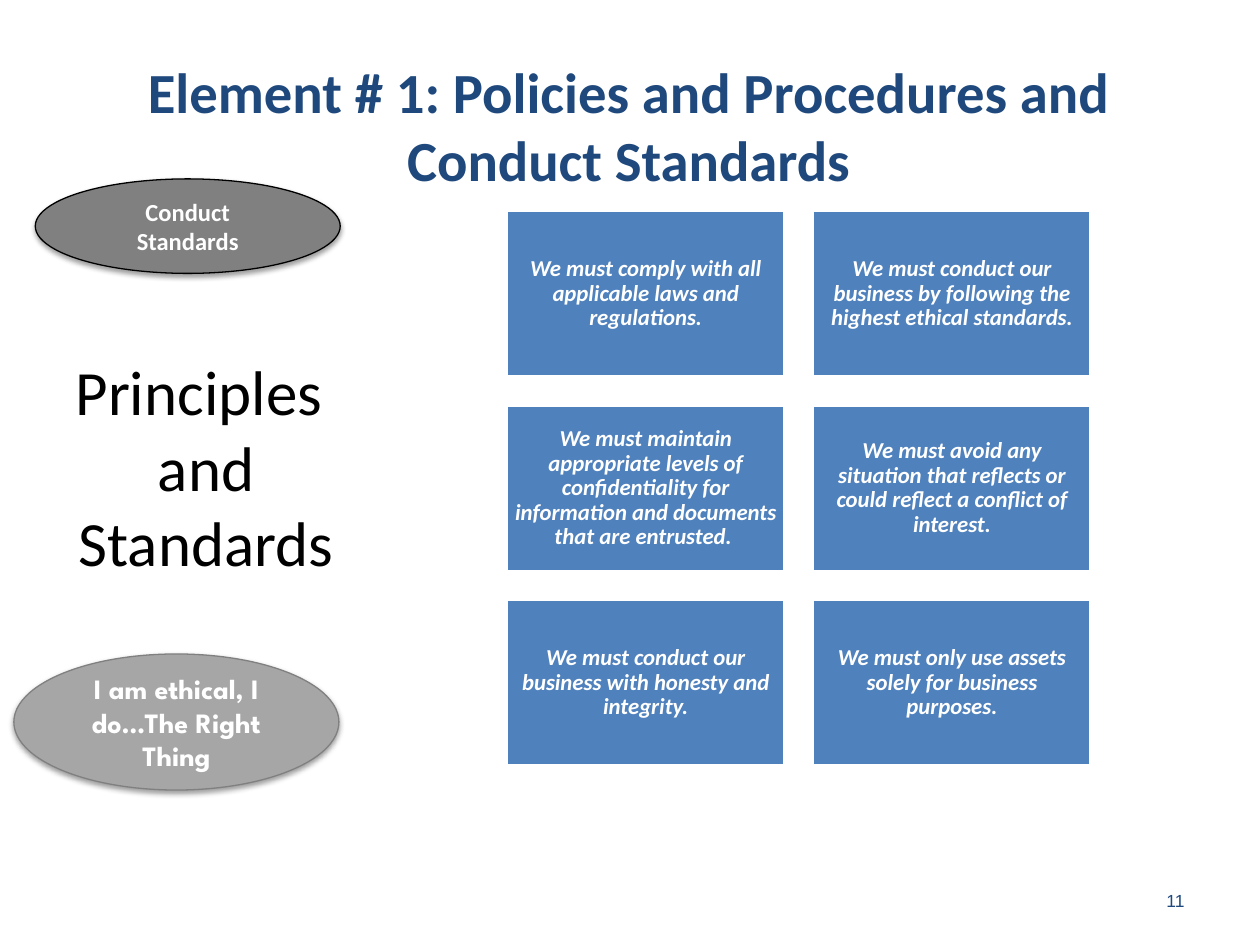
from lxml import etree
from pptx import Presentation, util as u
from pptx.dml.color import RGBColor
from pptx.enum import shapes, text
from pptx.oxml import ns

WIDE, HIGH = u.Inches(10), u.Inches(7.5)
NAVY, WHITE, GREY = "1F497D", "FFFFFF", "808080"
RULES = [
    "We must comply with all applicable laws and regulations.",
    "We must conduct our business by following the highest ethical standards.",
    "We must maintain appropriate levels of confidentiality for information "
    "and documents that are entrusted. ",
    "We must avoid any situation that reflects or could reflect a conflict of interest.",
    "We must conduct our business with honesty and integrity.",
    "We must only use assets solely for business purposes.",
]


def color(code):
    return RGBColor.from_string(code)


def area(left, top, width, height):
    """Turn percentages of the slide into lengths."""
    return [int(side * part / 100) for side, part in
            zip((WIDE, HIGH, WIDE, HIGH), (left, top, width, height))]


def write(shape, lines, size, tint, face="Calibri", bold=False, italic=False,
          align=text.PP_ALIGN.CENTER, anchor=text.MSO_ANCHOR.MIDDLE):
    frame = shape.text_frame
    frame.word_wrap = True
    frame.auto_size = text.MSO_AUTO_SIZE.NONE
    frame.vertical_anchor = anchor
    frame.text = lines
    for para in frame.paragraphs:
        para.alignment = align
        font = para.font
        font.name, font.size = face, u.Pt(size)
        font.bold, font.italic = bold, italic
        font.color.rgb = color(tint)
    return frame


def draw(slide, kind, box, fill, line, width):
    shape = slide.shapes.add_shape(kind, *box)
    shape.shadow.inherit = False
    shape.fill.solid()
    shape.fill.fore_color.rgb = color(fill)
    shape.line.color.rgb = color(line)
    shape.line.width = u.Pt(width)
    return shape


def head(slide, box, words):
    title = slide.shapes.title
    title.left, title.top, title.width, title.height = box
    write(title, words, 32.4, NAVY, bold=True)


def label(slide, box, words, size, tint, **style):
    write(slide.shapes.add_textbox(*box), words, size, tint, **style)


def oval(slide, box, words, size, face, fill, line):
    shape = draw(slide, shapes.MSO_SHAPE.OVAL, box, fill, line, 0.75)
    write(shape, words, size, WHITE, face, bold=True)
    # Soft shadow straight below
    effects = shape._element.spPr.find(ns.qn("a:effectLst"))
    shadow = etree.SubElement(effects, ns.qn("a:outerShdw"), blurRad=str(u.Pt(3.1)),
                              dist=str(u.Pt(1.6)), dir="5400000", rotWithShape="0")
    tone = etree.SubElement(shadow, ns.qn("a:srgbClr"), val="000000")
    etree.SubElement(tone, ns.qn("a:alpha"), val="38000")


def tiles(slide, box, items, cols=2):
    """Fill the box with a grid whose gaps are a tenth of a tile's width."""
    left, top, width, height = box
    rows = -(-len(items) // cols)
    wide = int(width / (cols + 0.1 * (cols - 1)))
    gap = wide // 10
    high = (height - gap * (rows - 1)) // rows
    for i, item in enumerate(items):
        row, col = divmod(i, cols)
        spot = left + col * (wide + gap), top + row * (high + gap), wide, high
        tile = draw(slide, shapes.MSO_SHAPE.RECTANGLE, spot, "4F81BD", WHITE, 2)
        frame = write(tile, item, 13, WHITE, bold=True, italic=True)
        frame.margin_left = frame.margin_right = u.Inches(0.05)
        frame.margin_top = frame.margin_bottom = u.Inches(0.05)
        frame.paragraphs[0].line_spacing = 0.9


def main():
    deck = Presentation()
    deck.slide_width, deck.slide_height = WIDE, HIGH
    slide = deck.slides.add_slide(deck.slide_layouts[5])

    # Title
    head(slide, area(4.9, 6, 90, 14.4),
         "Element # 1: Policies and Procedures and Conduct Standards")
    # Left column
    oval(slide, area(2.8, 18.93, 24.2, 10), "Conduct Standards", 14,
         "Calibri", GREY, "000000")
    label(slide, area(3.6, 36.67, 25.5, 25.6), "Principles \nand Standards", 36,
          "000000", anchor=text.MSO_ANCHOR.TOP)
    oval(slide, area(1.1, 69.2, 25.8, 14.4), "I am ethical, I do…The Right Thing",
         16, "League Spartan", "A6A6A6", GREY)
    # Grid of standards
    tiles(slide, area(40.2, 22.27, 46.4, 58.8), RULES)
    # Page number
    label(slide, area(71.7, 92.67, 23.3, 5.33), "11", 10, NAVY, face="Arial",
          align=text.PP_ALIGN.RIGHT)

    deck.save("out.pptx")


if __name__ == "__main__":
    main()
